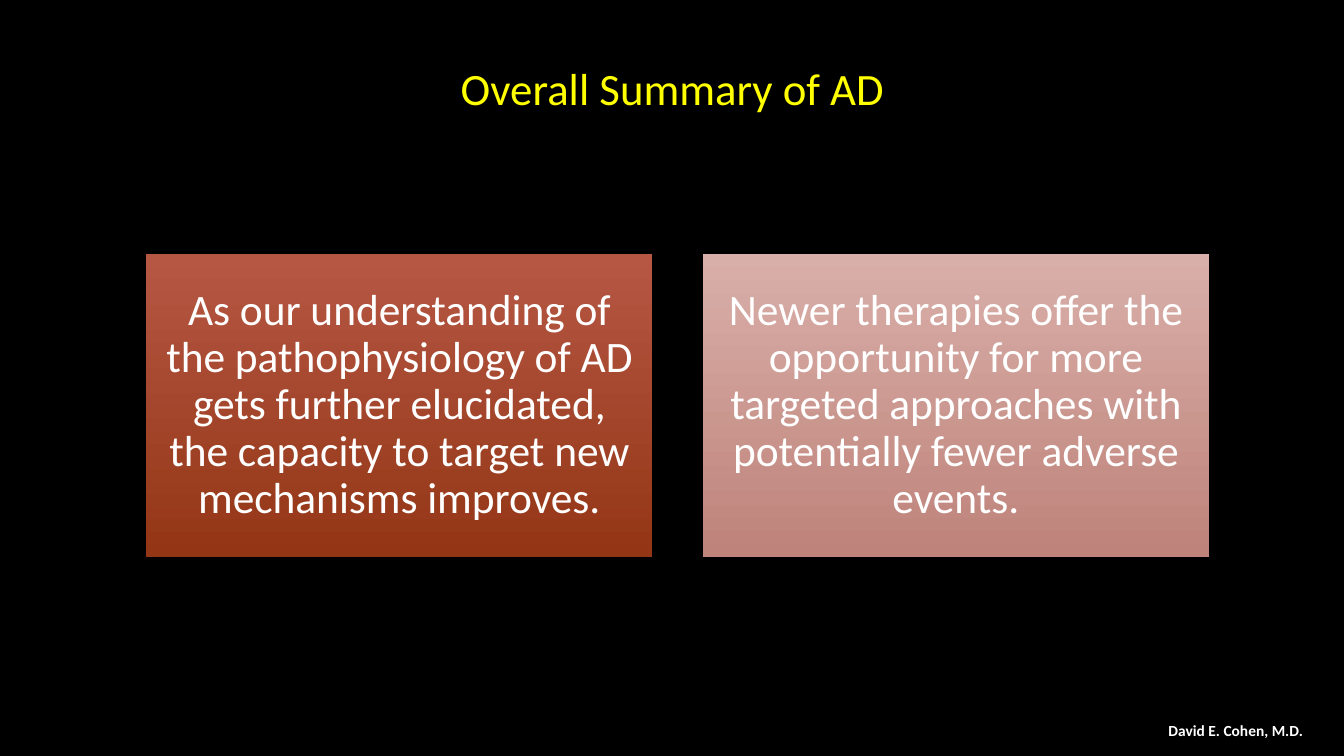
from dataclasses import dataclass

from pptx import Presentation
from pptx import util as u
from pptx.dml.color import RGBColor
from pptx.enum import shapes, text


@dataclass(frozen=True)
class Theme:
    font: str = "Calibri"
    background: str = "000000"
    title: str = "FFFF00"
    body: str = "FFFFFF"
    cards: tuple = (("B65744", "933615"), ("D9AFA9", "BE837A"))
    title_size: int = 32
    card_size: int = 31
    credit_size: int = 11


THEME = Theme()
CARDS = (
    "As our understanding of the pathophysiology of AD gets further elucidated, "
    "the capacity to target new mechanisms improves.",
    "Newer therapies offer the opportunity for more targeted approaches with "
    "potentially fewer adverse events.",
)


def write(tf, words, size, color, align, bold=False):
    p = tf.paragraphs[0]
    p.text = words
    p.alignment = align
    p.font.name = THEME.font
    p.font.size = u.Pt(size)
    p.font.bold = bold
    p.font.color.rgb = RGBColor.from_string(color)
    return p


def add_title(s, left, top, width, height, words):
    tf = s.shapes.add_textbox(*map(u.Inches, (left, top, width, height))).text_frame
    tf.word_wrap = True
    tf.vertical_anchor = text.MSO_ANCHOR.MIDDLE
    write(tf, words, THEME.title_size, THEME.title, text.PP_ALIGN.CENTER)


def add_card(s, left, top, width, height, words, gradient):
    sp = s.shapes.add_shape(
        shapes.MSO_SHAPE.RECTANGLE, *map(u.Inches, (left, top, width, height))
    )
    sp.shadow.inherit = False
    sp.line.fill.background()
    sp.fill.gradient()
    sp.fill.gradient_angle = 270
    for position, (stop, color) in enumerate(zip(sp.fill.gradient_stops, gradient)):
        stop.position = position
        stop.color.rgb = RGBColor.from_string(color)
    tf = sp.text_frame
    tf.word_wrap = True
    tf.vertical_anchor = text.MSO_ANCHOR.MIDDLE
    tf.margin_left = tf.margin_right = tf.margin_top = tf.margin_bottom = u.Inches(0.13)
    p = write(tf, words, THEME.card_size, THEME.body, text.PP_ALIGN.CENTER)
    p.line_spacing = 0.9
    p.space_after = u.Pt(11)


def add_cards(s, left, top, width, height, gap):
    card_width = (width - gap * (len(CARDS) - 1)) / len(CARDS)
    for i, (words, gradient) in enumerate(zip(CARDS, THEME.cards)):
        x = left + i * (card_width + gap)
        add_card(s, x, top, card_width, height, words, gradient)


def add_credit(s, left, top, width, height, words):
    tf = s.shapes.add_textbox(*map(u.Inches, (left, top, width, height))).text_frame
    tf.word_wrap = False
    tf.auto_size = text.MSO_AUTO_SIZE.SHAPE_TO_FIT_TEXT
    write(tf, words, THEME.credit_size, THEME.body, text.PP_ALIGN.LEFT, bold=True)


def main():
    prs = Presentation()
    prs.slide_width, prs.slide_height = u.Inches(13.33), u.Inches(7.5)
    s = prs.slides.add_slide(prs.slide_layouts[6])
    s.background.fill.solid()
    s.background.fill.fore_color.rgb = RGBColor.from_string(THEME.background)
    add_title(s, 1.01, 0.34, 11.32, 1.06, "Overall Summary of AD")
    add_cards(s, 1.45, 2.52, 10.54, 3.01, gap=0.5)
    add_credit(s, 11.49, 7.1, 1.55, 0.29, "David E. Cohen, M.D.")
    prs.save("out.pptx")


if __name__ == "__main__":
    main()
